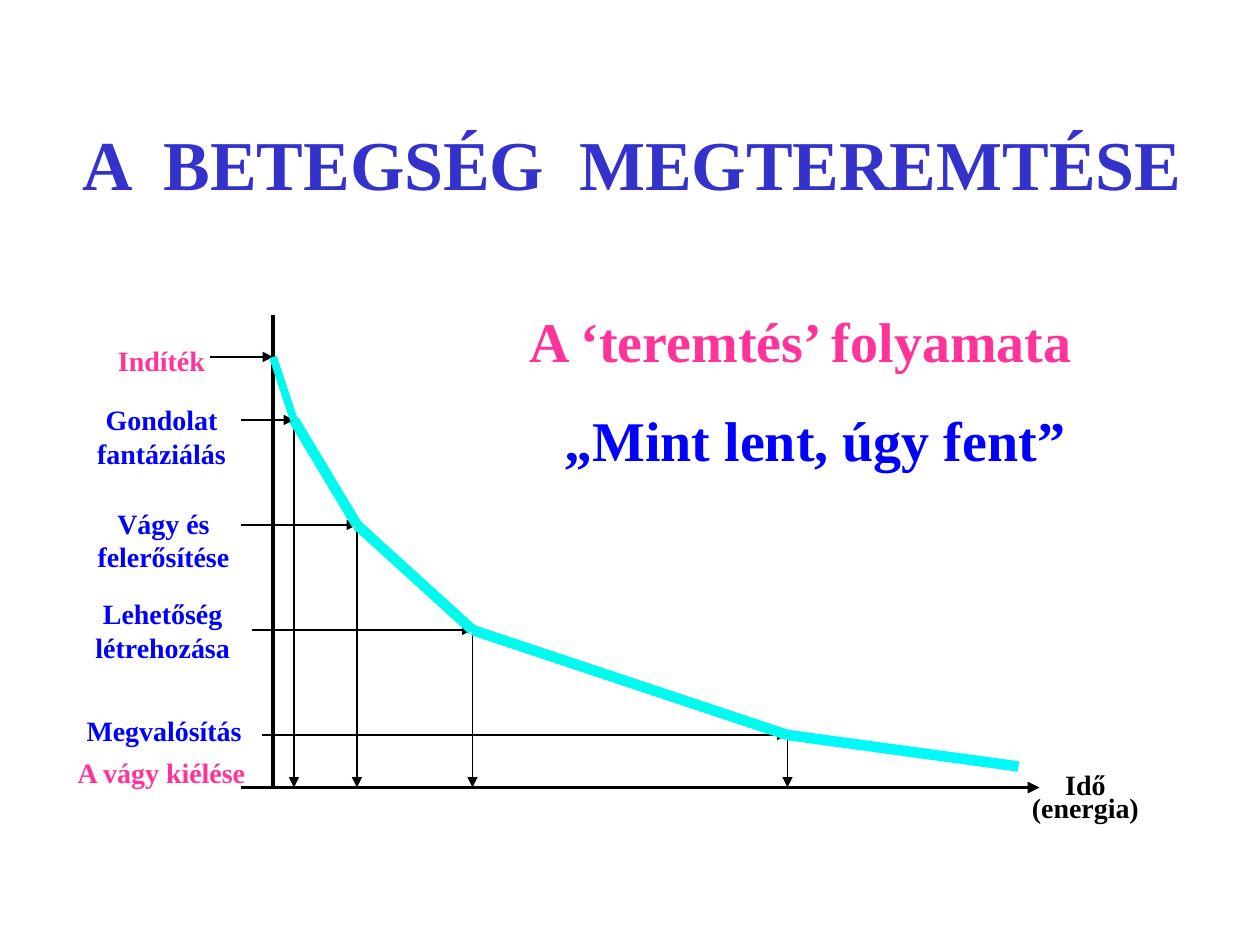
from itertools import pairwise

from lxml import etree
from pptx import Presentation
from pptx.dml.color import RGBColor
from pptx.enum.shapes import MSO_CONNECTOR
from pptx.enum.text import MSO_ANCHOR, MSO_AUTO_SIZE, PP_ALIGN
from pptx.oxml.ns import qn
from pptx.util import Emu, Pt

PX = 9525  # EMU per px, 96 px to the inch
FONT = "Times New Roman"
BLACK = RGBColor(0x00, 0x00, 0x00)
BLUE = RGBColor(0x00, 0x00, 0xFF)
PINK = RGBColor(0xFF, 0x33, 0x99)
INDIGO = RGBColor(0x33, 0x33, 0xCC)
AQUA = RGBColor(0x00, 0xFA, 0xEE)
AQUA_START = RGBColor(0x02, 0xF8, 0xEC)
AQUA_END = RGBColor(0x00, 0xFA, 0xFA)

AXIS_X, AXIS_Y = 208, 600
CURVE = [(208, 272), (224, 320), (272, 400), (360, 480), (600, 560), (776, 584)]
CURVE_STYLES = [(AQUA_START, 4.5), (AQUA, 6), (AQUA, 6), (AQUA, 6), (AQUA_END, 6)]
STAGE_LEFTS = [160, 184, 184, 192, 200]

# text, (left, top, width, height), size, colour, line spacing
TEXTS = [
    ("Indíték", (75, 257, 96, 36), 16, PINK, 1.0),
    ("Gondolat fantáziálás", (61, 302, 124, 61), 16, BLUE, 1.0),
    ("Vágy és felerősítése", (60, 381, 129, 61), 16, BLUE, 1.0),
    ("Lehetőség létrehozása", (56, 450, 136, 61), 16, BLUE, 1.0),
    ("Megvalósítás", (48, 546, 154, 29), 16, BLUE, 0.7),
    ("A vágy kiélése", (45, 578, 156, 29), 16, PINK, 0.7),
    ("Idő\v(energia)", (775, 587, 104, 46), 16, BLACK, 0.7),
    ("A ‘teremtés’ folyamata", (386, 229, 448, 60), 32, PINK, 1.0),
    ("„Mint lent, úgy fent”", (411, 304, 420, 61), 32, BLUE, 1.0),
]


def px(*values):
    return [Emu(v * PX) for v in values]


def write(tf, text, size, color, spacing=1.0):
    tf.word_wrap = True
    p = tf.paragraphs[0]
    p.text = text
    p.alignment = PP_ALIGN.CENTER
    p.line_spacing = spacing
    for r in p.runs:
        r.font.name = FONT
        r.font.size = Pt(size)
        r.font.bold = True
        r.font.color.rgb = color


def add_title(s, text):
    sp = s.shapes.title
    sp.left, sp.top, sp.width, sp.height = px(25, 64, 913, 120)
    tf = sp.text_frame
    tf.auto_size = MSO_AUTO_SIZE.NONE
    tf.vertical_anchor = MSO_ANCHOR.MIDDLE
    write(tf, text, 40, INDIGO)


def add_text(s, text, box, size, color, spacing):
    tf = s.shapes.add_textbox(*px(*box)).text_frame
    write(tf, text, size, color, spacing)


def add_line(s, start, end, width, color=BLACK, arrow=False):
    line = s.shapes.add_connector(MSO_CONNECTOR.STRAIGHT, *px(*start, *end))
    line.line.color.rgb = color
    line.line.width = Pt(width)
    if arrow:
        ln = line.line._get_or_add_ln()
        etree.SubElement(ln, qn("a:tailEnd"), type="triangle")
    etree.SubElement(line._element.spPr, qn("a:effectLst"))


def add_diagram(s):
    add_line(s, (AXIS_X, 240), (AXIS_X, AXIS_Y), 2.25)
    for left, (x, y) in zip(STAGE_LEFTS, CURVE):
        add_line(s, (left, y), (x, y), 1, arrow=True)
    for x, y in CURVE[1:-1]:
        add_line(s, (x, y), (x, AXIS_Y), 0.75, arrow=True)
    for (start, end), (color, width) in zip(pairwise(CURVE), CURVE_STYLES):
        add_line(s, start, end, width, color)
    add_line(s, (184, AXIS_Y), (792, AXIS_Y), 2.25, arrow=True)


def main():
    prs = Presentation()
    prs.slide_width, prs.slide_height = px(960, 720)
    s = prs.slides.add_slide(prs.slide_layouts[5])
    add_title(s, "A  BETEGSÉG  MEGTEREMTÉSE")
    add_diagram(s)
    for item in TEXTS:
        add_text(s, *item)
    prs.save("out.pptx")


if __name__ == "__main__":
    main()
